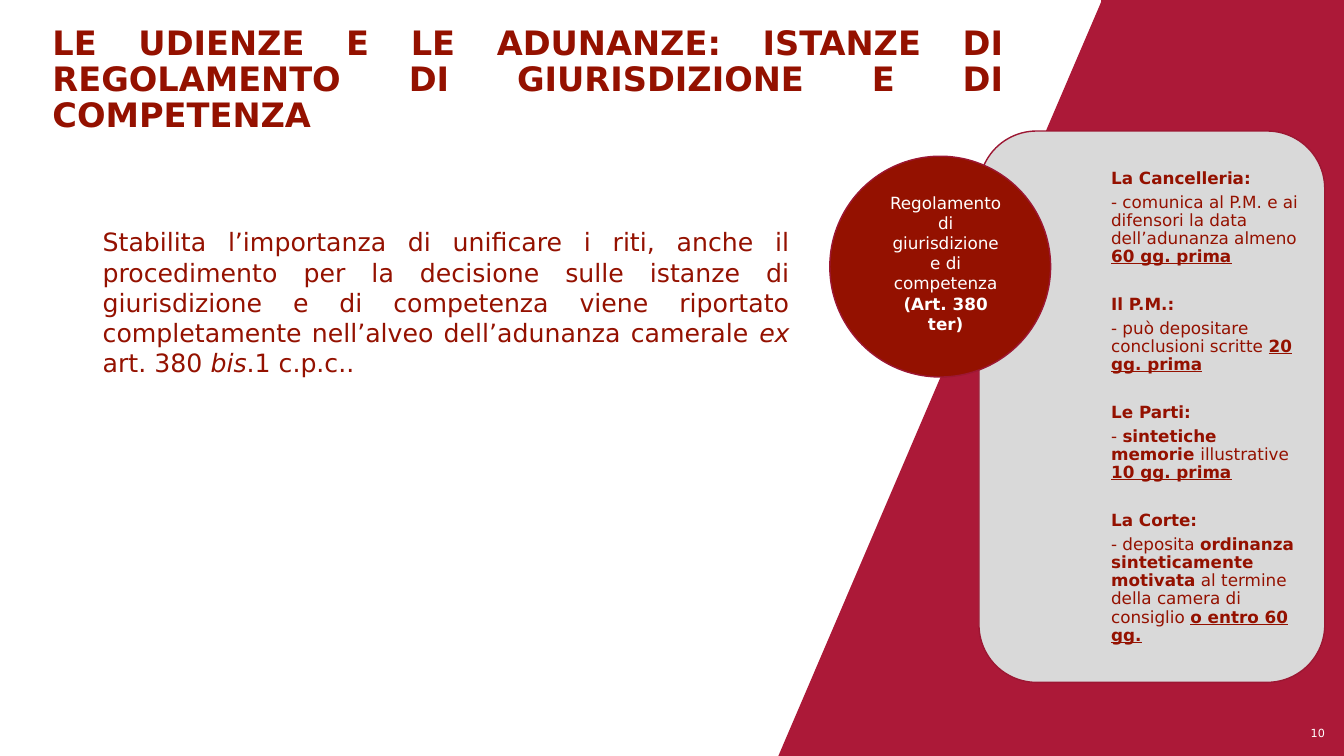
from lxml.etree import SubElement
from pptx import Presentation
from pptx.dml.color import RGBColor
from pptx.enum.shapes import MSO_SHAPE
from pptx.enum.text import MSO_ANCHOR, MSO_AUTO_SIZE, PP_ALIGN
from pptx.oxml.ns import qn
from pptx.util import Emu, Pt

PX = 9144
CRIMSON, BRICK, WINE = "AC1938", "941100", "9C1733"
SILVER, WHITE = "D9D9D9", "FFFFFF"


def px(length):
    """Turn hundredths of an inch into EMU."""
    return Emu(length * PX)


def rgb(code):
    """Turn a hex string into a colour."""
    return RGBColor.from_string(code)


def write(frame, paragraphs, size, color, font, align=PP_ALIGN.LEFT, bold=False,
          spacing=1.0, after=0, gap=0, anchor=MSO_ANCHOR.TOP,
          insets=(10, 5, 10, 5), wrap=True, grow=False):
    """Fill a frame with paragraphs of (text, marks) runs; gap precedes each bold heading."""
    frame.word_wrap = wrap
    frame.auto_size = MSO_AUTO_SIZE.SHAPE_TO_FIT_TEXT if grow else MSO_AUTO_SIZE.NONE
    frame.vertical_anchor = anchor
    (frame.margin_left, frame.margin_top,
     frame.margin_right, frame.margin_bottom) = map(px, insets)
    for index, runs in enumerate(paragraphs):
        paragraph = frame.paragraphs[0] if index == 0 else frame.add_paragraph()
        properties = paragraph._p.get_or_add_pPr()
        properties.set("marL", "0")
        properties.set("indent", "0")
        SubElement(properties, qn("a:buNone"))
        paragraph.alignment = align
        paragraph.line_spacing = spacing
        paragraph.space_before = Pt(gap if index and runs[0][1] == "b" else 0)
        paragraph.space_after = Pt(after)
        for text, marks in runs:
            run = paragraph.add_run()
            run.text = text
            run.font.name = font
            run.font.size = Pt(size)
            run.font.color.rgb = rgb(color)
            run.font.bold = bold or "b" in marks
            run.font.italic = "i" in marks
            run.font.underline = "u" in marks


class Deck:
    """Hold the style and the current slide."""

    font = "DejaVu Sans"

    def __init__(self):
        """Open a wide presentation with one title and content slide."""
        self.file = Presentation()
        self.file.slide_width, self.file.slide_height = px(1333), px(750)
        self.slide = self.file.slides.add_slide(self.file.slide_layouts[1])

    def shape(self, preset, box, fill, line=None, flip=False):
        """Add a flat preset shape."""
        shape = self.slide.shapes.add_shape(preset, *map(px, box))
        shape.shadow.inherit = False
        shape.fill.solid()
        shape.fill.fore_color.rgb = rgb(fill)
        if line:
            shape.line.color.rgb = rgb(line)
            shape.line.width = Pt(1)
        else:
            shape.line.fill.background()
        if flip:
            shape._element.spPr.get_or_add_xfrm().set("flipH", "1")

    def placeholder(self, number, box, paragraphs, **style):
        """Move a placeholder to the front and fill it."""
        holder = self.slide.placeholders[number]
        self.slide.shapes._spTree.append(holder._element)
        holder.left, holder.top, holder.width, holder.height = map(px, box)
        write(holder.text_frame, paragraphs, font=self.font, **style)

    def text(self, box, paragraphs, **style):
        """Add a text box that grows with its text."""
        textbox = self.slide.shapes.add_textbox(*map(px, box))
        write(textbox.text_frame, paragraphs, font=self.font, grow=True, **style)


def main():
    """Build the slide and save it."""
    deck = Deck()
    deck.shape(MSO_SHAPE.RECTANGLE, (1092, 0, 241, 750), CRIMSON)
    deck.shape(MSO_SHAPE.RIGHT_TRIANGLE, (772, 0, 321, 750), CRIMSON, flip=True)

    title = ("LE UDIENZE E LE ADUNANZE: ISTANZE DI REGOLAMENTO "
             "DI GIURISDIZIONE E DI COMPETENZA")
    deck.placeholder(0, (42, 87, 963, 52), [[(title, "")]], size=24, color=BRICK,
                     bold=True, align=PP_ALIGN.JUSTIFY, spacing=0.9,
                     anchor=MSO_ANCHOR.BOTTOM)

    deadlines = [
        [("La Cancelleria:", "b")],
        [("- comunica al P.M. e ai difensori la data dell’adunanza almeno ", ""),
         ("60 gg. prima", "bu")],
        [("Il P.M.:", "b")],
        [("- può depositare conclusioni scritte ", ""), ("20 gg. prima", "bu")],
        [("Le Parti:", "b")],
        [("- ", ""), ("sintetiche memorie ", "b"), ("illustrative ", ""),
         ("10 gg. prima", "bu")],
        [("La Corte:", "b")],
        [("- deposita ", ""), ("ordinanza sinteticamente motivata", "b"),
         (" al termine della camera di consiglio ", ""), ("o entro 60 gg.", "bu")],
    ]
    deck.shape(MSO_SHAPE.ROUNDED_RECTANGLE, (971, 130, 343, 547), SILVER, WINE)
    deck.placeholder(1, (987, 147, 309, 514), deadlines, size=12, color=BRICK,
                     spacing=0.9, after=4.2, gap=17, anchor=MSO_ANCHOR.MIDDLE,
                     insets=(115, 5, 5, 5))

    deck.shape(MSO_SHAPE.OVAL, (823, 155, 219, 219), BRICK, WINE)
    subject = [[("Regolamento", "")], [("di", "")],
               [("giurisdizione e di competenza", "")], [("(Art. 380 ter)", "b")]]
    deck.text((871, 186, 134, 151), subject, size=12, color=WHITE,
              align=PP_ALIGN.CENTER)

    premise = [
        ("Stabilita l’importanza di unificare i riti, anche il procedimento per la "
         "decisione sulle istanze di giurisdizione e di competenza viene riportato "
         "completamente nell’alveo dell’adunanza camerale ", ""),
        ("ex", "i"), (" art. 380 ", ""), ("bis", "i"), (".1 c.p.c..", ""),
    ]
    deck.text((92, 220, 701, 162), [premise], size=18, color=BRICK,
              align=PP_ALIGN.JUSTIFY)

    deck.text((1289, 716, 35, 24), [[("10", "")]], size=8, color=WHITE,
              align=PP_ALIGN.RIGHT, wrap=False)
    deck.file.save("out.pptx")


if __name__ == "__main__":
    main()
